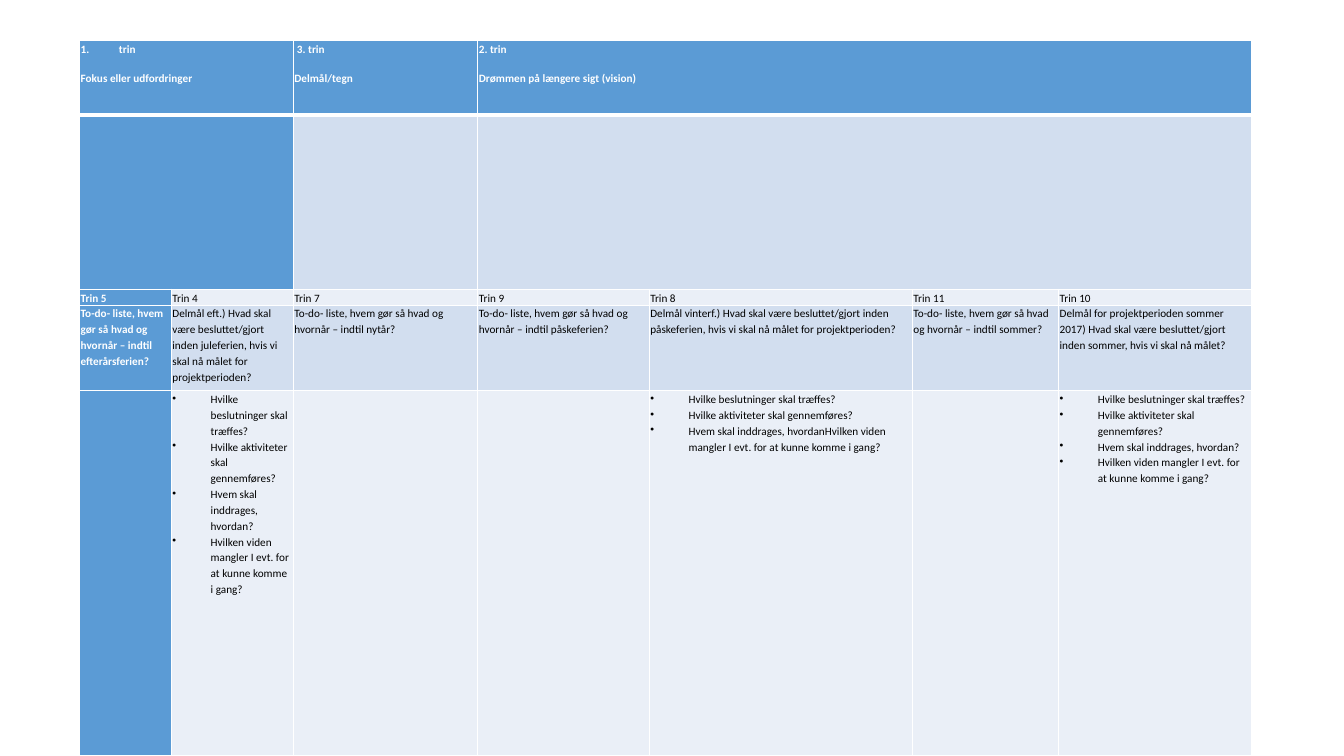
from lxml import etree
from pptx import Presentation
from pptx.dml.color import RGBColor
from pptx.oxml import ns
from pptx.util import Inches, Pt

WHITE = RGBColor(0xFF, 0xFF, 0xFF)
BLACK = RGBColor(0x00, 0x00, 0x00)
BLUE = RGBColor(0x5B, 0x9B, 0xD5)
LIGHT_BLUE = RGBColor(0xD2, 0xDE, 0xEF)
PALE_BLUE = RGBColor(0xEA, 0xEF, 0xF7)

COLUMN_WIDTHS = [0.91, 1.21, 1.83, 1.7, 2.61, 1.45, 1.91]
ROW_HEIGHTS = [0.74, 1.73, 0.15, 0.85, 3.62]
ROW_FILLS = [BLUE, LIGHT_BLUE, PALE_BLUE, LIGHT_BLUE, PALE_BLUE]

TODO = "To-do- liste, hvem gør så hvad og hvornår – indtil "
DECISIONS = "Hvilke beslutninger skal træffes?"
ACTIVITIES = "Hvilke aktiviteter skal gennemføres?"
PEOPLE = "Hvem skal inddrages, hvordan"
KNOWLEDGE = "Hvilken viden mangler I evt. for at kunne komme i gang?"
QUESTIONS = [DECISIONS, ACTIVITIES, PEOPLE + "?", KNOWLEDGE]

PLAN = [
    [["trin", "Fokus eller udfordringer"], [], ["\u00a03. trin", "Delmål/tegn"],
     ["2. trin", "Drømmen på længere sigt (vision)"], [], [], []],
    [[]] * 7,
    [[f"Trin {step}"] for step in (5, 4, 7, 9, 8, 11, 10)],
    [[TODO + "efterårsferien?"],
     ["Delmål eft.) Hvad skal være besluttet/gjort inden juleferien, "
      "hvis vi skal nå målet for projektperioden?"],
     [TODO + "nytår?"],
     [TODO + "påskeferien?"],
     ["Delmål vinterf.) Hvad skal være besluttet/gjort inden påskeferien, "
      "hvis vi skal nå målet for projektperioden?"],
     [TODO + "sommer?"],
     ["Delmål for projektperioden sommer 2017) Hvad skal være besluttet/gjort "
      "inden sommer, hvis vi skal nå målet?"]],
    [[], QUESTIONS, [], [], [DECISIONS, ACTIVITIES, PEOPLE + KNOWLEDGE], [], QUESTIONS],
]


def add_borders(cell, top, bottom):
    sides = [("lnL", 1), ("lnR", 1), ("lnT", top), ("lnB", bottom)]
    properties = cell._tc.get_or_add_tcPr()
    for position, (side, width) in enumerate(sides):
        line = etree.Element(ns.qn("a:" + side), w=str(Pt(width)))
        fill = etree.SubElement(line, ns.qn("a:solidFill"))
        etree.SubElement(fill, ns.qn("a:srgbClr"), val=str(WHITE))
        properties.insert(position, line)


def add_bullet(paragraph, tag, **attributes):
    properties = paragraph._p.get_or_add_pPr()
    properties.set("marL", str(Inches(0.38)))
    properties.set("indent", str(-Inches(0.38)))
    etree.SubElement(properties, ns.qn("a:" + tag), **attributes)


prs = Presentation()
prs.slide_width, prs.slide_height = Inches(13.33), Inches(7.5)
slide = prs.slides.add_slide(prs.slide_layouts[6])

plan_table = slide.shapes.add_table(
    len(ROW_HEIGHTS), len(COLUMN_WIDTHS), Inches(0.79), Inches(0.4),
    Inches(sum(COLUMN_WIDTHS)), Inches(sum(ROW_HEIGHTS))).table
for column, width in zip(plan_table.columns, COLUMN_WIDTHS):
    column.width = Inches(width)
for row, height in zip(plan_table.rows, ROW_HEIGHTS):
    row.height = Inches(height)
for r in (0, 1):
    plan_table.cell(r, 0).merge(plan_table.cell(r, 1))
    plan_table.cell(r, 3).merge(plan_table.cell(r, 6))

for r, entries in enumerate(PLAN):
    for c, lines in enumerate(entries):
        cell = plan_table.cell(r, c)
        is_heading = r == 0 or c == 0
        cell.margin_left = cell.margin_right = Inches(0.01)
        cell.margin_top = cell.margin_bottom = 0
        cell.fill.solid()
        cell.fill.fore_color.rgb = BLUE if is_heading else ROW_FILLS[r]
        add_borders(cell, 3 if r == 1 else 1, 3 if r == 0 else 1)
        if not lines:
            continue
        cell.text = "\n".join(lines)
        for i, paragraph in enumerate(cell.text_frame.paragraphs):
            paragraph.line_spacing = 1.15
            paragraph.space_before = Pt(10 if r == 0 else 0)
            if r == 4:
                add_bullet(paragraph, "buChar", char="•")
            elif r == c == i == 0:
                add_bullet(paragraph, "buAutoNum", type="arabicPeriod")
            font = paragraph.font
            font.name, font.size, font.bold = "Calibri", Pt(8), is_heading
            font.color.rgb = WHITE if is_heading else BLACK

prs.save("out.pptx")
